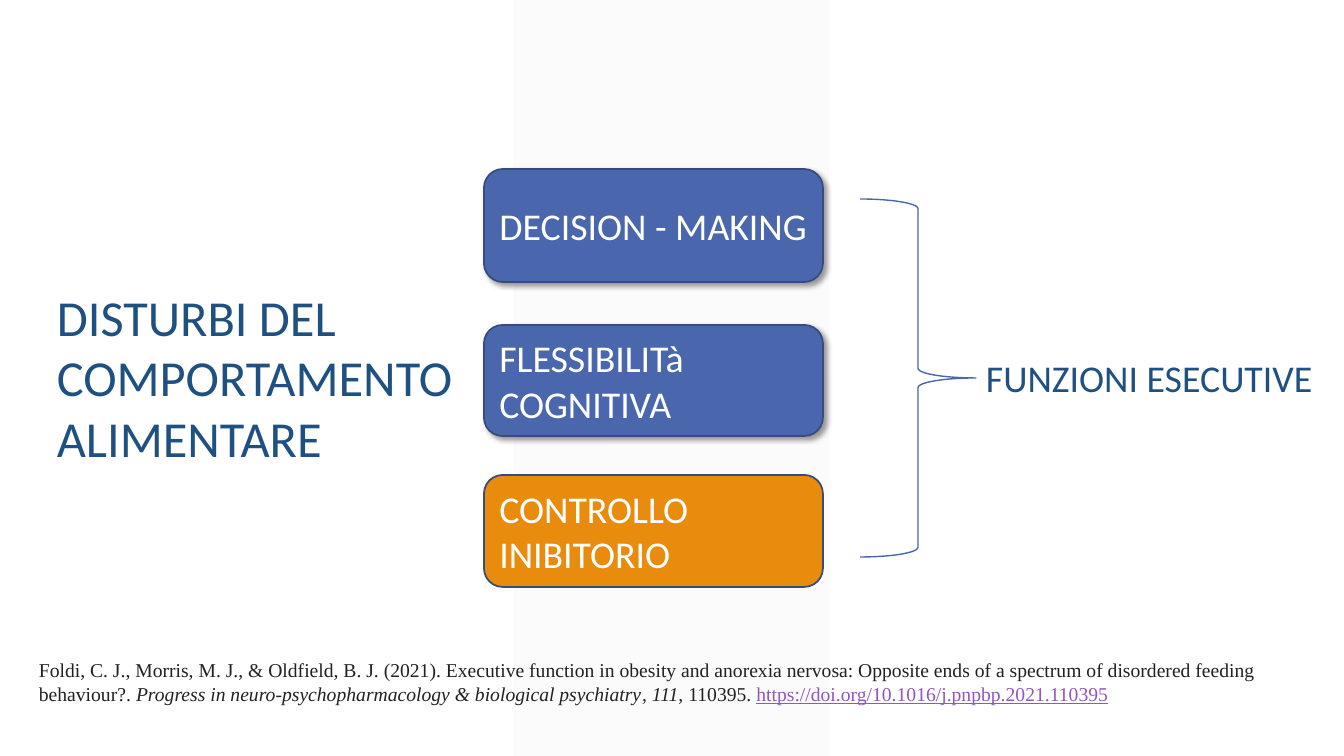
from lxml import etree
from pptx import Presentation
from pptx import util as u
from pptx.dml.color import RGBColor
from pptx.enum import shapes, text
from pptx.oxml import ns

THEME = {
    "heading": ("Calibri", 36, "1E5082"),
    "outcome": ("Calibri", 27, "1E5082"),
    "function": ("Calibri", 27, "FFFFFF"),
    "citation": ("Times New Roman", 14, "212121"),
    "band": "F2F2F2",
    "blue": "4A66AC",
    "orange": "E98B0D",
    "outline": "374B7F",
    "link": "9454C3",
}
SLIDE = (1344, 756)
BAND = (514, 0, 315, 756)
BRACE = (860, 199, 116, 358)
FUNCTION_LEFT, FUNCTION_WIDTH = 484, 339

FUNCTIONS = [
    ("DECISION - MAKING", 169, 113, "blue", True),
    ("FLESSIBILITà COGNITIVA", 325, 111, "blue", True),
    ("CONTROLLO INIBITORIO", 475, 112, "orange", False),
]
CITATION = [
    ("Foldi, C. J., Morris, M. J., & Oldfield, B. J. (2021). Executive function in obesity "
     "and anorexia nervosa: Opposite ends of a spectrum of disordered feeding behaviour?. ", ""),
    ("Progress in neuro-psychopharmacology & biological psychiatry", "italic"),
    (", ", ""),
    ("111", "italic"),
    (", 110395. ", ""),
    ("https://doi.org/10.1016/j.pnpbp.2021.110395", "link"),
]
LABELS = [
    ([("DISTURBI DEL COMPORTAMENTO ALIMENTARE", "")], (47, 281, 417, 194), "heading", True),
    (CITATION, (29, 653, 1315, 57), "citation", True),
    ([("FUNZIONI ESECUTIVE", "")], (976, 350, 358, 56), "outcome", False),
]


def emu(lengths):
    return [u.Emu(round(px * 914400 / 100.8)) for px in lengths]


def color(name):
    return RGBColor.from_string(THEME[name])


def write(frame, runs, style):
    face, size, ink = THEME[style]
    paragraph = frame.paragraphs[0]
    paragraph.alignment = text.PP_ALIGN.LEFT
    for words, emphasis in runs:
        run = paragraph.add_run()
        run.text = words
        run.font.name, run.font.size = face, u.Pt(size)
        run.font.color.rgb = RGBColor.from_string(ink)
        if emphasis == "italic":
            run.font.italic = True
        elif emphasis == "link":
            run.font.underline = True
            run.font.color.rgb = color("link")


def draw(slide, preset, place, fill=None, line=None, weight=1):
    shape = slide.shapes.add_shape(preset, *emu(place))
    shape.shadow.inherit = False
    if fill:
        shape.fill.solid()
        shape.fill.fore_color.rgb = color(fill)
    else:
        shape.fill.background()
    if line:
        shape.line.color.rgb = color(line)
        shape.line.width = u.Pt(weight)
    else:
        shape.line.fill.background()
    return shape


def set_alpha(color_element, percent):
    etree.SubElement(color_element, ns.qn("a:alpha"), val=str(percent * 1000))


def cast_shadow(shape):
    effects = shape._element.spPr.find(ns.qn("a:effectLst"))
    shadow = etree.SubElement(
        effects, ns.qn("a:outerShdw"), blurRad=str(u.Pt(4)), dist=str(u.Pt(3)),
        dir=str(45 * 60000), algn="tl", rotWithShape="0")
    set_alpha(etree.SubElement(shadow, ns.qn("a:srgbClr"), val="000000"), 40)


def main():
    deck = Presentation()
    deck.slide_width, deck.slide_height = emu(SLIDE)
    slide = deck.slides.add_slide(deck.slide_layouts[6])

    band = draw(slide, shapes.MSO_SHAPE.PARALLELOGRAM, BAND, "band")
    band.adjustments[0] = 0
    set_alpha(band._element.spPr.find(ns.qn("a:solidFill"))[0], 30)

    for words, top, height, fill, shaded in FUNCTIONS:
        place = (FUNCTION_LEFT, top, FUNCTION_WIDTH, height)
        function = draw(slide, shapes.MSO_SHAPE.ROUNDED_RECTANGLE, place, fill, "outline", 1.25)
        if shaded:
            cast_shadow(function)
        function.text_frame.word_wrap = True
        function.text_frame.vertical_anchor = text.MSO_ANCHOR.MIDDLE
        write(function.text_frame, [(words, "")], "function")

    draw(slide, shapes.MSO_SHAPE.RIGHT_BRACE, BRACE, line="blue")

    for runs, place, style, wraps in LABELS:
        label = slide.shapes.add_textbox(*emu(place)).text_frame
        label.word_wrap = wraps
        label.auto_size = text.MSO_AUTO_SIZE.SHAPE_TO_FIT_TEXT
        write(label, runs, style)

    deck.save("out.pptx")


if __name__ == "__main__":
    main()
